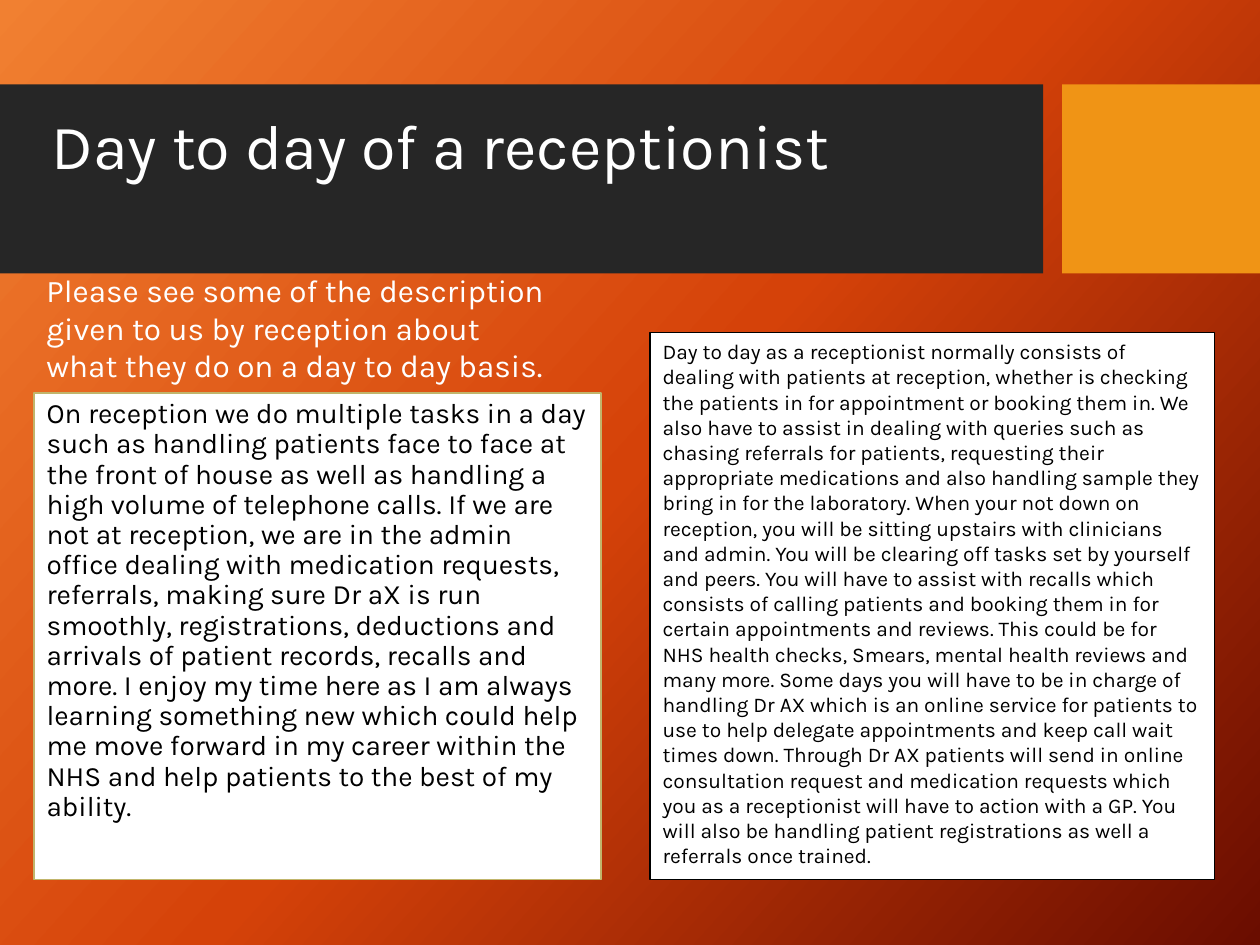
from copy import deepcopy
from pptx import Presentation
from pptx.dml.color import RGBColor
from pptx.enum.shapes import MSO_SHAPE
from pptx.enum.text import MSO_ANCHOR, MSO_AUTO_SIZE, PP_ALIGN
from pptx.oxml.ns import qn
from pptx.util import Inches, Pt

TITLE = "Day to day of a receptionist"
INTRO = ("Please see some of the description given to us by reception about "
         "what they do on a day to day basis.")
# Each account is a list of sentences
FIRST_ACCOUNT = [
    "On reception we do multiple tasks in a day such as handling patients face to face "
    "at the front of house as well as handling a high volume of telephone calls.",
    "If we are not at reception, we are in the admin office dealing with medication "
    "requests, referrals, making sure Dr aX is run smoothly, registrations, deductions "
    "and arrivals of patient records, recalls and more.",
    "I enjoy my time here as I am always learning something new which could help me move "
    "forward in my career within the NHS and help patients to the best of my ability.",
]
SECOND_ACCOUNT = [
    "Day to day as a receptionist normally consists of dealing with patients at reception, "
    "whether is checking the patients in for appointment or booking them in.",
    "We also have to assist in dealing with queries such as chasing referrals for patients, "
    "requesting their appropriate medications and also handling sample they bring in for "
    "the laboratory.",
    "When your not down on reception, you will be sitting upstairs with clinicians and admin.",
    "You will be clearing off tasks set by yourself and peers.",
    "You will have to assist with recalls which consists of calling patients and booking "
    "them in for certain appointments and reviews.",
    "This could be for NHS health checks, Smears, mental health reviews and many more.",
    "Some days you will have to be in charge of handling Dr AX which is an online service "
    "for patients to use to help delegate appointments and keep call wait times down.",
    "Through Dr AX patients will send in online consultation request and medication "
    "requests which you as a receptionist will have to action with a GP.",
    "You will also be handling patient registrations as well a referrals once trained.",
]


def rgb(value):
    return RGBColor.from_string(value)


def place(shape, box):
    for name, value in zip(("left", "top", "width", "height"), box):
        setattr(shape, name, Inches(value))


def paint(shape, fill, line=None):
    shape.fill.solid()
    shape.fill.fore_color.rgb = rgb(fill)
    if line:
        shape.line.color.rgb = rgb(line)
        shape.line.width = Pt(1)
    else:
        shape.line.fill.background()


def write(shape, text, size, color, spacing=1.0, anchor=MSO_ANCHOR.TOP):
    tf = shape.text_frame
    frame = {"word_wrap": True, "auto_size": MSO_AUTO_SIZE.NONE, "vertical_anchor": anchor}
    for name, value in frame.items():
        setattr(tf, name, value)
    p = tf.paragraphs[0]
    para = {"alignment": PP_ALIGN.LEFT, "line_spacing": spacing, "space_before": Pt(0)}
    for name, value in para.items():
        setattr(p, name, value)
    r = p.add_run()
    r.text = text
    for name, value in {"name": "Karla", "size": Pt(size), "bold": False}.items():
        setattr(r.font, name, value)
    r.font.color.rgb = rgb(color)
    return p


def add_rect(s, box, fill, line=None):
    sp = s.shapes.add_shape(MSO_SHAPE.RECTANGLE, *map(Inches, box))
    sp.shadow.inherit = False
    paint(sp, fill, line)
    return sp


def add_background(s, colors, angle):
    fill = s.background.fill
    fill.gradient()
    fill.gradient_angle = 360 - angle  # measured counter-clockwise
    first = next(s.element.iter(qn("a:gs")))
    first.addnext(deepcopy(first))
    for i, (stop, color) in enumerate(zip(fill.gradient_stops, colors)):
        stop.position = i / (len(colors) - 1)
        stop.color.rgb = rgb(color)


def add_header(s, x, y, w, h):
    # Dark band and accent block, split by a narrow gap
    band_w, gap = 8.28, 0.15
    add_rect(s, (x, y, band_w, h), "262626")
    add_rect(s, (x + band_w + gap, y, w - band_w - gap, h), "F09415")
    # Title, brought in front of the band
    title = s.shapes.title
    s.shapes.element.append(title.element)
    place(title, (x + 0.31, y + 0.17, 8.17, 0.69))
    write(title, TITLE, 36, "FFFFFF", 0.9, MSO_ANCHOR.MIDDLE)


def add_accounts(s, x, y, w, h):
    # First account, bottom left
    body = s.placeholders[1]
    s.shapes.element.append(body.element)
    place(body, (x, y + 0.48, 4.5, h - 0.48))
    paint(body, "FFFFFF", "C1B56B")
    p = write(body, " ".join(FIRST_ACCOUNT), 16, "000000", 0.9)
    pPr = p._p.get_or_add_pPr()
    pPr.set("marL", "0")
    pPr.set("indent", "0")
    pPr.append(pPr.makeelement(qn("a:buNone"), {}))
    # Second account, full height on the right
    right_w = 4.48
    account = add_rect(s, (x + w - right_w, y, right_w, h), "FFFFFF", "000000")
    write(account, " ".join(SECOND_ACCOUNT), 12, "000000")


def add_intro(s, x, y, w, h):
    tb = s.shapes.add_textbox(*map(Inches, (x, y, w, h)))
    write(tb, INTRO, 18, "FFFFFF")


def main():
    prs = Presentation()
    prs.slide_width, prs.slide_height = Inches(10), Inches(7.5)
    s = prs.slides.add_slide(prs.slide_layouts[1])
    add_background(s, ("F18031", "D54209", "6A0D00"), 42)
    add_header(s, 0, 0.67, 10, 1.5)
    add_accounts(s, 0.27, 2.64, 9.37, 4.34)
    add_intro(s, 0.27, 2.1, 4.19, 1.31)
    prs.save("out.pptx")


if __name__ == "__main__":
    main()
